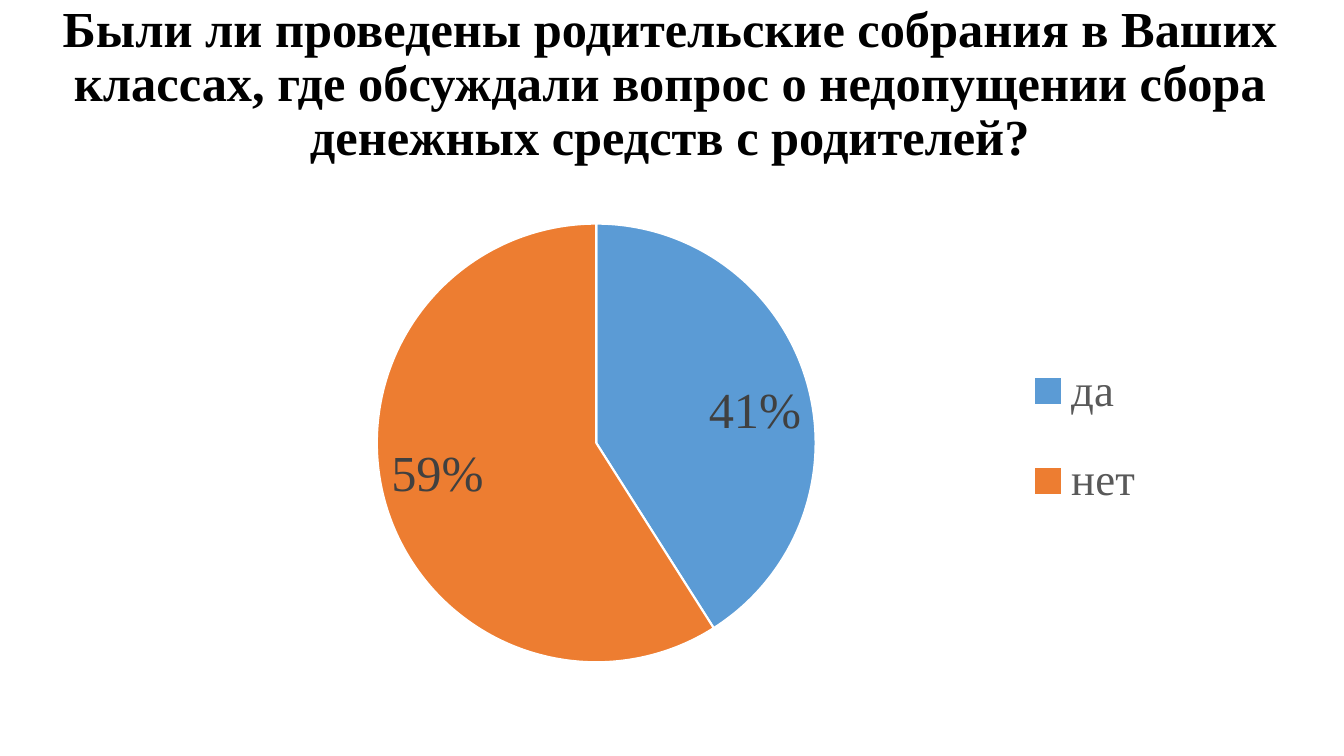
from dataclasses import dataclass

from pptx import Presentation
from pptx.chart.chart import Chart
from pptx.chart.data import CategoryChartData
from pptx.dml.color import RGBColor
from pptx.enum.chart import XL_CHART_TYPE, XL_LABEL_POSITION, XL_LEGEND_POSITION
from pptx.enum.text import MSO_ANCHOR, PP_ALIGN
from pptx.oxml import parse_xml
from pptx.oxml.ns import nsdecls
from pptx.slide import Slide
from pptx.text.text import Font
from pptx.util import Inches, Pt

BLACK = RGBColor(0x00, 0x00, 0x00)
WHITE = RGBColor(0xFF, 0xFF, 0xFF)
DARK = RGBColor(0x40, 0x40, 0x40)
GRAY = RGBColor(0x59, 0x59, 0x59)
BLUE = RGBColor(0x5B, 0x9B, 0xD5)
ORANGE = RGBColor(0xED, 0x7D, 0x31)
SERIF = "Times New Roman"
TITLE = (
    "Были ли проведены родительские собрания в Ваших классах, "
    "где обсуждали вопрос о недопущении сбора денежных средств с родителей?"
)


@dataclass
class Answer:
    name: str
    share: int
    color: RGBColor


@dataclass
class Frame:
    x: float
    y: float
    w: float
    h: float


ANSWERS = [Answer("да", 41, BLUE), Answer("нет", 59, ORANGE)]


def set_font(font: Font, size: int, color: RGBColor, name: str = SERIF) -> None:
    font.name = name
    font.size = Pt(size)
    font.color.rgb = color


def add_title(slide: Slide) -> None:
    box = slide.shapes.add_textbox(
        Inches(-0.08), Inches(0.12), Inches(13.45), Inches(1.45)
    )
    frame = box.text_frame
    frame.word_wrap = True
    frame.vertical_anchor = MSO_ANCHOR.MIDDLE
    frame.text = TITLE
    line = frame.paragraphs[0]
    line.alignment = PP_ALIGN.CENTER
    line.line_spacing = 0.9
    font = line.runs[0].font
    set_font(font, 36, BLACK)
    font.bold = True


def place(chart: Chart, part: str, index: int, frame: Frame, target: str = "") -> None:
    node = chart.element.xpath(f".//c:{part}")[0]
    for old in node.xpath("./c:layout"):
        node.remove(old)
    node.insert(index, parse_xml(
        f'<c:layout {nsdecls("c")}><c:manualLayout>{target}'
        '<c:xMode val="edge"/><c:yMode val="edge"/>'
        f'<c:x val="{frame.x}"/><c:y val="{frame.y}"/>'
        f'<c:w val="{frame.w}"/><c:h val="{frame.h}"/>'
        '</c:manualLayout></c:layout>'
    ))


def add_pie(slide: Slide) -> None:
    data = CategoryChartData()
    data.categories = [answer.name for answer in ANSWERS]
    data.add_series("Series 1", [answer.share for answer in ANSWERS])
    chart = slide.shapes.add_chart(
        XL_CHART_TYPE.PIE, Inches(1.66), Inches(2.08), Inches(10.77), Inches(4.63), data
    ).chart
    set_font(chart.font, 10, BLACK, "Calibri")
    chart.has_title = False

    chart.has_legend = True
    chart.legend.position = XL_LEGEND_POSITION.RIGHT
    chart.legend.include_in_layout = False
    set_font(chart.legend.font, 32, GRAY)

    plot = chart.plots[0]
    plot.vary_by_categories = True
    series = plot.series[0]
    for index, answer in enumerate(ANSWERS):
        style = series.points[index].format
        style.fill.solid()
        style.fill.fore_color.rgb = answer.color
        style.line.color.rgb = WHITE
        style.line.width = Pt(1.5)

    labels = series.data_labels
    labels.show_value = False
    labels.show_percentage = True
    labels.number_format = "0%"
    labels.number_format_is_linked = False
    labels.position = XL_LABEL_POSITION.INSIDE_END
    set_font(labels.font, 36, DARK)

    place(chart, "plotArea", 0, Frame(0.19, 0.03, 0.41, 0.94),
          '<c:layoutTarget val="inner"/>')
    place(chart, "legend", 1, Frame(0.78, 0.25, 0.13, 0.47))


def main() -> None:
    deck = Presentation()
    deck.slide_width = Inches(13.33)
    deck.slide_height = Inches(7.5)
    slide = deck.slides.add_slide(deck.slide_layouts[6])
    add_title(slide)
    add_pie(slide)
    deck.save("out.pptx")


if __name__ == "__main__":
    main()
